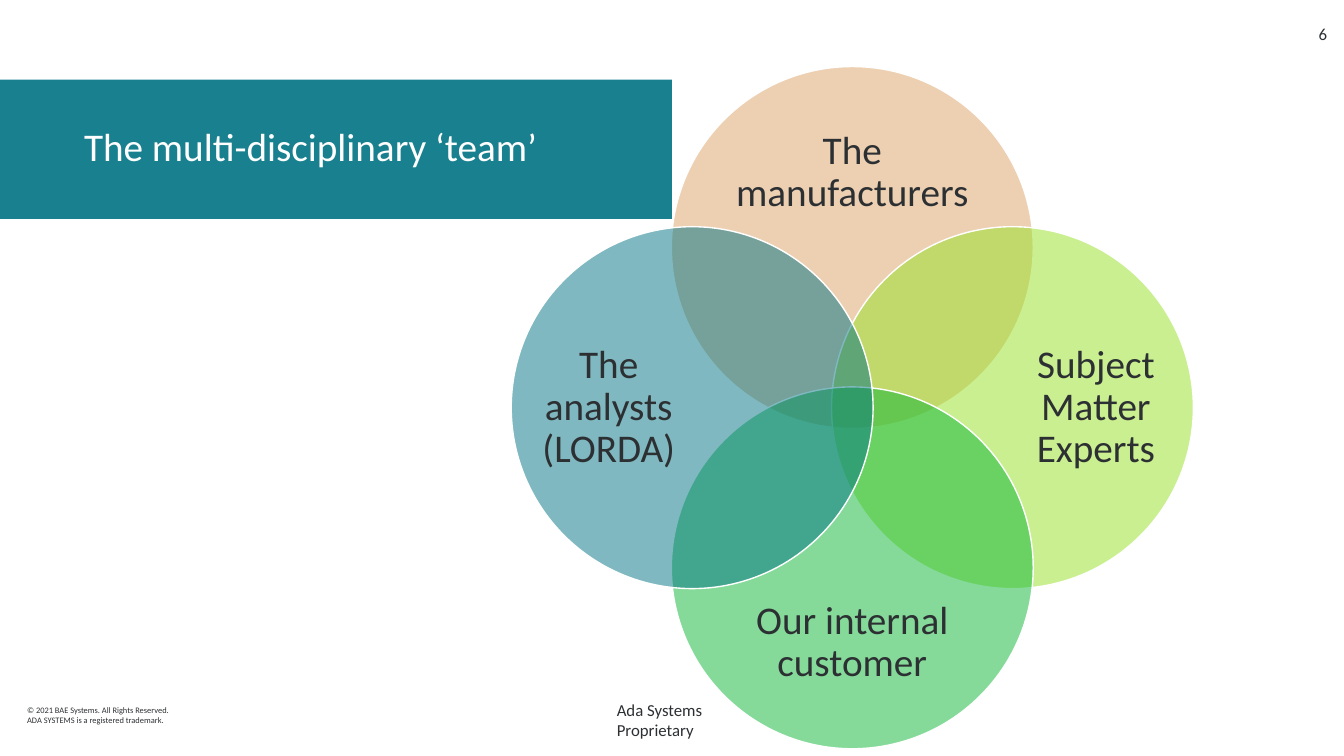
"""Build the slide showing the multi-disciplinary team as four overlapping circles."""
from dataclasses import dataclass

from lxml import etree
from pptx import Presentation
from pptx.dml.color import RGBColor
from pptx.enum.shapes import MSO_SHAPE
from pptx.enum.text import MSO_ANCHOR, PP_ALIGN
from pptx.oxml.ns import qn
from pptx.util import Pt

OVAL, RECTANGLE = MSO_SHAPE.OVAL, MSO_SHAPE.RECTANGLE
TOP, MIDDLE = MSO_ANCHOR.TOP, MSO_ANCHOR.MIDDLE
LEFT, CENTER, RIGHT = PP_ALIGN.LEFT, PP_ALIGN.CENTER, PP_ALIGN.RIGHT

TEAL = RGBColor(0x00, 0x73, 0x83)
SAND = RGBColor(0xDC, 0xA3, 0x66)
LIME = RGBColor(0x97, 0xE0, 0x23)
GREEN = RGBColor(0x0C, 0xB7, 0x37)
INK = RGBColor(0x2D, 0x30, 0x33)
WHITE = RGBColor(0xFF, 0xFF, 0xFF)

CENTER_X, CENTER_Y = 608.8, 291.2
DIAMETER = 258.5
CIRCLE_OFFSET = 114.4
LABEL_LONG = 198.7


@dataclass(frozen=True)
class Member:
    label: str
    color: RGBColor
    across: int
    down: int


@dataclass(frozen=True)
class Note:
    lines: tuple
    frame: tuple
    size: float
    align: PP_ALIGN = LEFT
    anchor: MSO_ANCHOR = MIDDLE
    spacing: float = 1.0
    margin_right: float = 0


MEMBERS = (
    Member("The manufacturers", SAND, 0, -1),
    Member("Subject Matter Experts", LIME, 1, 0),
    Member("Our internal customer", GREEN, 0, 1),
    Member("The analysts (LORDA)", TEAL, -1, 0),
)
NOTES = (
    Note(("© 2021 BAE Systems. All Rights Reserved.",
          "ADA SYSTEMS is a registered trademark."), (19.4, 499, 128.9, 23), 6),
    Note(("Ada Systems Proprietary",), (440.6, 499.7, 118, 14.4), 12,
         anchor=TOP, margin_right=24),
    Note(("6",), (911.5, 19.4, 36.5, 10), 12, RIGHT),
)


def centered_frame(x: float, y: float, width: float, height: float) -> tuple:
    return x - width / 2, y - height / 2, width, height


def write_text(box, note: Note, color: RGBColor = INK, margin_left: float = 0) -> None:
    frame = box.text_frame
    settings = {
        "word_wrap": True, "vertical_anchor": note.anchor,
        "margin_left": Pt(margin_left), "margin_right": Pt(note.margin_right),
        "margin_top": Pt(0), "margin_bottom": Pt(0),
    }
    for name, value in settings.items():
        setattr(frame, name, value)
    frame.text = "\n".join(note.lines)
    for para in frame.paragraphs:
        para.alignment = note.align
        para.line_spacing = note.spacing
        for span in para.runs:
            for name, value in {"name": "Calibri", "size": Pt(note.size)}.items():
                setattr(span.font, name, value)
            span.font.color.rgb = color


def add_note(page, note: Note) -> None:
    box = page.shapes.add_textbox(*map(Pt, note.frame))
    write_text(box, note)


def add_tinted_shape(page, kind: MSO_SHAPE, frame: tuple, color: RGBColor, opacity: int):
    shape = page.shapes.add_shape(kind, *map(Pt, frame))
    shape.shadow.inherit = False
    shape.fill.solid()
    shape.fill.fore_color.rgb = color
    tint = shape.fill._xPr.find(qn("a:solidFill")).find(qn("a:srgbClr"))
    etree.SubElement(tint, qn("a:alpha")).set("val", str(opacity * 1000))
    return shape


def add_title(page) -> None:
    frame = (0, 56.9, 480, 99.4)
    banner = add_tinted_shape(page, RECTANGLE, frame, TEAL, 90)
    banner.line.fill.background()
    note = Note(("The multi-disciplinary ‘team’",), frame, 28, spacing=0.9)
    write_text(banner, note, WHITE, margin_left=60)


def add_member(page, member: Member) -> None:
    circle_frame = centered_frame(
        CENTER_X + member.across * CIRCLE_OFFSET,
        CENTER_Y + member.down * CIRCLE_OFFSET, DIAMETER, DIAMETER)
    circle = add_tinted_shape(page, OVAL, circle_frame, member.color, 50)
    circle.line.color.rgb = WHITE
    circle.line.width = Pt(1)
    width, height = (99.4, LABEL_LONG) if member.across else (LABEL_LONG, 82)
    label_frame = centered_frame(
        CENTER_X + member.across * 174, CENTER_Y + member.down * 168, width, height)
    add_note(page, Note((member.label,), label_frame, 28, CENTER, spacing=0.9))


def main() -> None:
    deck = Presentation()
    deck.slide_width, deck.slide_height = Pt(960), Pt(540)
    page = deck.slides.add_slide(deck.slide_layouts[6])
    for note in NOTES:
        add_note(page, note)
    add_title(page)
    for member in MEMBERS:
        add_member(page, member)
    deck.save("out.pptx")


if __name__ == "__main__":
    main()
